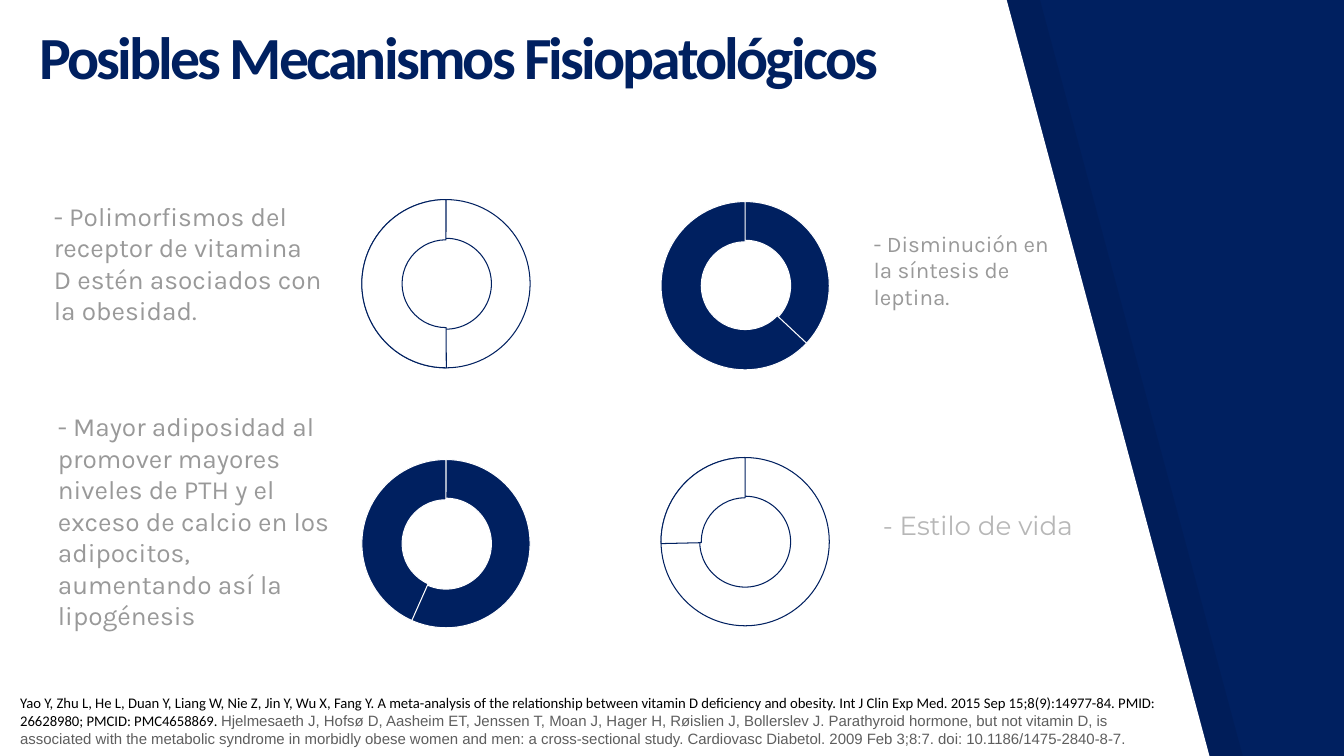
from pptx import Presentation
from pptx.dml.color import RGBColor
from pptx.enum.shapes import MSO_SHAPE
from pptx.enum.text import MSO_ANCHOR, MSO_AUTO_SIZE, PP_ALIGN
from pptx.oxml.ns import qn
from pptx.util import Cm, Pt
from lxml.etree import SubElement

COLORS = {
    "navy": "002060",
    "white": "FFFFFF",
    "black": "000000",
    "gray": "999999",
    "light gray": "B7B7B7",
    "dark gray": "5E5E5E",
}
SLIDE_WIDTH, SLIDE_HEIGHT = 33.87, 19.05
DONUT_SIZE = 4.24
ARC_END = 270.04

MECHANISMS = [
    ("- Polimorfismos del receptor de vitamina D estén asociados con la obesidad.",
     (1.03, 4.71, 7.47, 1.45), 0, 18.7, "Karla", "gray"),
    ("- Mayor adiposidad al promover mayores niveles de PTH y el exceso de calcio "
     "en los adipocitos, aumentando así la lipogénesis",
     (0.65, 10.02, 8.23, 1.45), 0.48, 18.7, "Karla", "gray"),
    ("- Disminución en la síntesis de leptina.",
     (21.21, 5.46, 5.8, 1.45), 0.48, 16, "Karla", "gray"),
    ("- Estilo de vida",
     (21.92, 12.5, 7.47, 1.45), 0, 18.7, "Montserrat", "light gray"),
]
DONUTS = [
    (9.12, 5.03, 89.77, "white", "navy"),
    (9.12, 11.58, 113.96, "navy", "white"),
    (16.66, 11.53, 178.65, "white", "navy"),
    (16.66, 5.08, 43.12, "navy", "white"),
]
REFERENCES = [
    ("Yao Y, Zhu L, He L, Duan Y, Liang W, Nie Z, Jin Y, Wu X, Fang Y. A meta-analysis "
     "of the relationship between vitamin D deficiency and obesity. Int J Clin Exp Med. "
     "2015 Sep 15;8(9):14977-84. PMID: 26628980; PMCID: PMC4658869. ",
     10.5, "Calibri", "black"),
    ("Hjelmesaeth J, Hofsø D, Aasheim ET, Jenssen T, Moan J, Hager H, Røislien J, "
     "Bollerslev J. Parathyroid hormone, but not vitamin D, is associated with the "
     "metabolic syndrome in morbidly obese women and men: a cross-sectional study. "
     "Cardiovasc Diabetol. 2009 Feb 3;8:7. doi: 10.1186/1475-2840-8-7.",
     10.7, "Arial", "dark gray"),
]


def color(name):
    """Return the palette color with the given name."""
    return RGBColor.from_string(COLORS[name])


def format_font(font, size, family, color_name):
    """Set size, family and color of a font."""
    font.size = Pt(size)
    font.name = family
    font.color.rgb = color(color_name)


def format_frame(frame, inset, anchor):
    """Set wrapping, insets and anchor of a text frame."""
    frame.word_wrap = True
    frame.auto_size = MSO_AUTO_SIZE.NONE
    frame.vertical_anchor = anchor
    frame.margin_left = frame.margin_right = Cm(inset)
    frame.margin_top = frame.margin_bottom = Cm(inset)


def add_panel(slide, box, slant, color_name, opacity=None):
    """Draw a panel whose right edge slants outward toward the bottom."""
    left, top, width, height = box
    corners = [(left + width - slant, top), (left + width, top + height), (left, top + height)]
    builder = slide.shapes.build_freeform(Cm(left), Cm(top))
    builder.add_line_segments([(Cm(x), Cm(y)) for x, y in corners])
    panel = builder.convert_to_shape()
    panel.shadow.inherit = False
    panel.fill.solid()
    panel.fill.fore_color.rgb = color(color_name)
    panel.line.fill.background()
    if opacity is not None:
        fill_color = panel.element.spPr.find(qn("a:solidFill"))[0]
        SubElement(fill_color, qn("a:alpha"), val=str(opacity * 1000))


def add_title(slide, box, text):
    """Place and format the title placeholder in front of the panels."""
    title = slide.shapes.title
    title.left, title.top, title.width, title.height = map(Cm, box)
    title.element.getparent().append(title.element)
    format_frame(title.text_frame, 0.33, MSO_ANCHOR.BOTTOM)
    paragraph = title.text_frame.paragraphs[0]
    paragraph.alignment = PP_ALIGN.LEFT
    run = paragraph.add_run()
    run.text = text
    format_font(paragraph.font, 42.7, "Calibri", "navy")
    paragraph.font.bold = True
    run.font._element.set("spc", "-200")


def add_mechanism(slide, box, text, indent, size, family, color_name):
    """Write one mechanism in its box."""
    frame = slide.shapes.add_textbox(*map(Cm, box)).text_frame
    format_frame(frame, 0.33, MSO_ANCHOR.TOP)
    paragraph = frame.paragraphs[0]
    paragraph.text = text
    properties = paragraph._p.get_or_add_pPr()
    properties.set("marL", str(Cm(indent)))
    properties.set("indent", "0")
    format_font(paragraph.font, size, family, color_name)


def add_donut(slide, box, arc_start, fill_name, line_name):
    """Group a ring with the arc that divides it."""
    group = slide.shapes.add_group_shape()
    parts = [
        (MSO_SHAPE.DONUT, [0.23]),
        (MSO_SHAPE.BLOCK_ARC, [arc_start * 0.6, ARC_END * 0.6, 0.239]),
    ]
    for kind, adjustments in parts:
        shape = group.shapes.add_shape(kind, *map(Cm, box))
        for index, value in enumerate(adjustments):
            shape.adjustments[index] = value
        shape.shadow.inherit = False
        shape.fill.solid()
        shape.fill.fore_color.rgb = color(fill_name)
        shape.line.color.rgb = color(line_name)
        shape.line.width = Pt(0.75)


def add_references(slide, box):
    """Write the references as one paragraph."""
    frame = slide.shapes.add_textbox(*map(Cm, box)).text_frame
    format_frame(frame, 0.18, MSO_ANCHOR.MIDDLE)
    for text, size, family, color_name in REFERENCES:
        run = frame.paragraphs[0].add_run()
        run.text = text
        format_font(run.font, size, family, color_name)


def main():
    """Build and save the presentation."""
    presentation = Presentation()
    presentation.slide_width = Cm(SLIDE_WIDTH)
    presentation.slide_height = Cm(SLIDE_HEIGHT)
    slide = presentation.slides.add_slide(presentation.slide_layouts[5])
    slide.background.fill.solid()
    slide.background.fill.fore_color.rgb = color("navy")
    add_panel(slide, (0.84, 0, 30.48, SLIDE_HEIGHT), 5.11, "black", 7)
    add_panel(slide, (0, 0, 30.48, SLIDE_HEIGHT), 5.11, "white")
    for text, box, indent, size, family, color_name in MECHANISMS:
        add_mechanism(slide, box, text, indent, size, family, color_name)
    for left, top, arc_start, fill_name, line_name in DONUTS:
        add_donut(slide, (left, top, DONUT_SIZE, DONUT_SIZE), arc_start, fill_name, line_name)
    add_title(slide, (0.66, 1.12, 24.46, 1.52), "Posibles Mecanismos Fisiopatológicos")
    add_references(slide, (0.33, 17.3, 29.44, 1.7))
    presentation.save("out.pptx")


if __name__ == "__main__":
    main()
